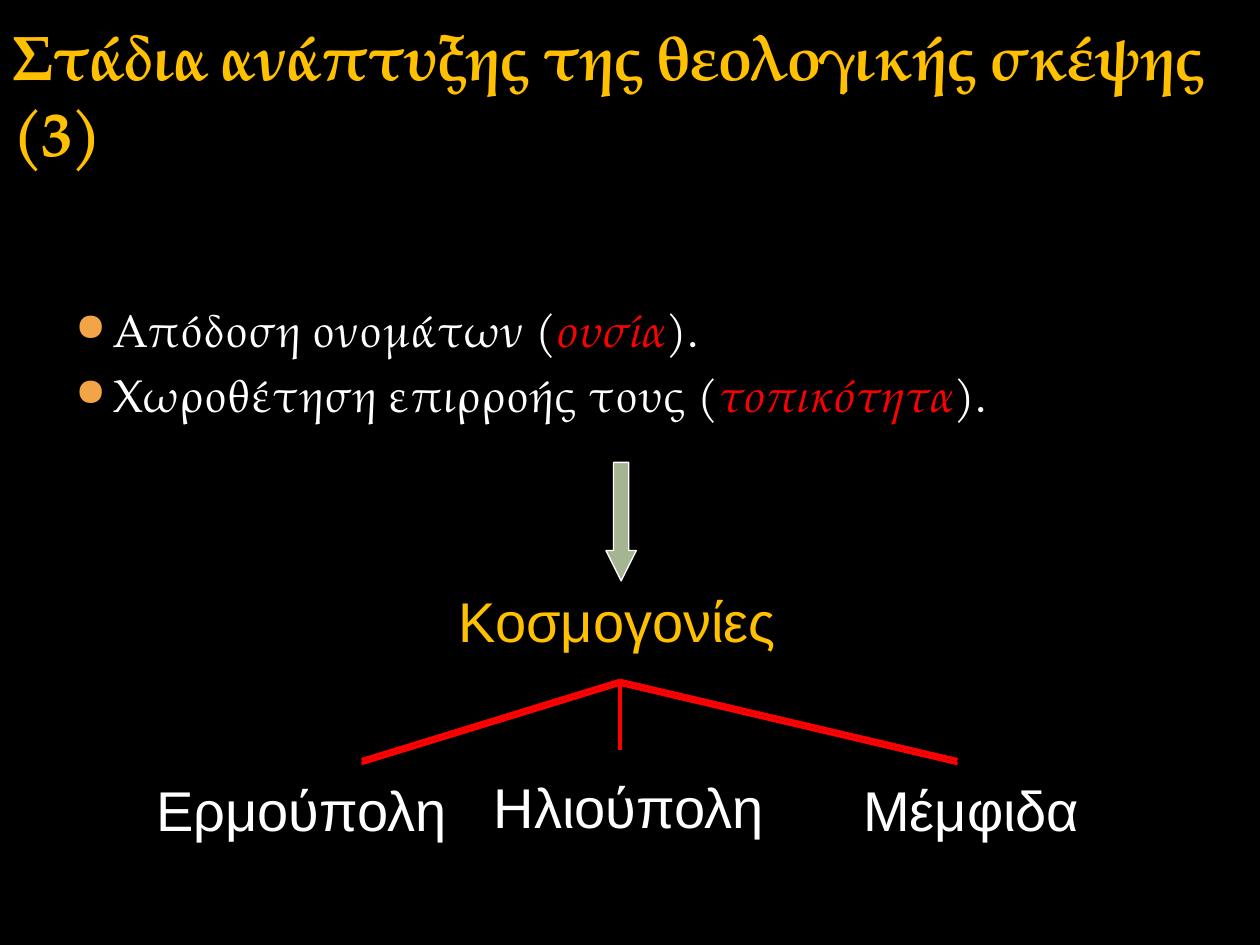
import pptx
import pptx.util
import pptx.dml.color
import pptx.enum.shapes
import pptx.enum.text
import pptx.oxml.ns
from lxml import etree
from pptx.util import Inches

COLORS = {
    "background": "000000",
    "gold": "FFC000",
    "white": "FFFFFF",
    "red": "FF0000",
    "bullet": "F3A447",
    "arrow": "A5B592",
}
SERIF = "TeX Gyre Pagella"
SANS = "Arial"
qn = pptx.oxml.ns.qn


def rgb(name):
    return pptx.dml.color.RGBColor.from_string(COLORS[name])


def add_run(p, text, *, size, font, color="white", bold=False, italic=False, spacing=0):
    r = p.add_run()
    r.text = text
    r.font.size = pptx.util.Pt(size)
    r.font.name = font
    r.font.bold = bold
    r.font.italic = italic
    r.font.color.rgb = rgb(color)
    if spacing:
        r._r.get_or_add_rPr().set("spc", str(spacing * 100))


def add_bullet(p):
    pPr = p._p.get_or_add_pPr()
    pPr.set("marL", str(Inches(0.3)))
    pPr.set("indent", str(-Inches(0.3)))
    buClr = etree.SubElement(pPr, qn("a:buClr"))
    etree.SubElement(buClr, qn("a:srgbClr"), val=COLORS["bullet"])
    etree.SubElement(pPr, qn("a:buSzPct"), val="85000")
    etree.SubElement(pPr, qn("a:buChar"), char="●")


def add_frame(s, x, y, w, h, wrap=True):
    tf = s.shapes.add_textbox(Inches(x), Inches(y), Inches(w), Inches(h)).text_frame
    tf.word_wrap = wrap
    return tf


def add_label(s, text, x, y, w, h, color="white"):
    tf = add_frame(s, x, y, w, h, wrap=False)
    p = tf.paragraphs[0]
    p.alignment = pptx.enum.text.PP_ALIGN.CENTER
    add_run(p, text, size=32, font=SANS, color=color)


def add_line(s, x1, y1, x2, y2):
    line = s.shapes.add_connector(
        pptx.enum.shapes.MSO_CONNECTOR.STRAIGHT,
        Inches(x1), Inches(y1), Inches(x2), Inches(y2))
    line.line.color.rgb = rgb("red")
    line.line.width = pptx.util.Pt(2)
    etree.SubElement(line._element.spPr, qn("a:effectLst"))


def add_title(s, x, y, w, h):
    tf = add_frame(s, x, y, w, h)
    tf.vertical_anchor = pptx.enum.text.MSO_ANCHOR.BOTTOM
    add_run(tf.paragraphs[0], "Στάδια ανάπτυξης της θεολογικής σκέψης (3)",
            size=36, font=SERIF, color="gold", bold=True, spacing=-1)


def add_body(s, x, y, w, h):
    items = [("Απόδοση ονομάτων (", "ουσία"),
             ("Χωροθέτηση επιρροής τους (", "τοπικότητα")]
    tf = add_frame(s, x, y, w, h)
    for i, (lead, term) in enumerate(items):
        p = tf.add_paragraph() if i else tf.paragraphs[0]
        add_bullet(p)
        if i:
            p.space_before = pptx.util.Pt(6)
        add_run(p, lead, size=26, font=SERIF)
        add_run(p, term, size=26, font=SERIF, color="red", italic=True)
        add_run(p, ").", size=26, font=SERIF)


def add_cosmogonies(s, x, y, w, h):
    arrow_w, arrow_h = 0.24, 0.94
    sp = s.shapes.add_shape(
        pptx.enum.shapes.MSO_SHAPE.DOWN_ARROW,
        Inches(x + 1.27), Inches(y), Inches(arrow_w), Inches(arrow_h))
    sp.adjustments[0] = 0.5
    sp.adjustments[1] = 1
    sp.shadow.inherit = False
    sp.fill.solid()
    sp.fill.fore_color.rgb = rgb("arrow")
    sp.line.color.rgb = rgb("white")
    sp.line.width = pptx.util.Pt(0.75)
    add_label(s, "Κοσμογονίες", x, y + arrow_h, w, h - arrow_h, color="gold")


def add_cities(s, x, y, w, h):
    apex = x + 3.79
    label_h = 0.64
    label_y = y + h - label_h
    for end in (x + 1.74, x + 6.47):
        for offset in (0, 0.03):
            add_line(s, apex, y + offset, end, y + 0.63 + offset)
    add_line(s, apex, y, apex, y + 0.55)
    add_label(s, "Ερμούπολη", x, label_y, 2.53, label_h)
    add_label(s, "Ηλιούπολη", x + 2.68, label_y - 0.03, 2.36, label_h)
    add_label(s, "Μέμφιδα", x + w - 1.94, label_y, 1.94, label_h)


def main():
    prs = pptx.Presentation()
    prs.slide_width = Inches(10)
    prs.slide_height = Inches(7.5)
    s = prs.slides.add_slide(prs.slide_layouts[6])
    s.background.fill.solid()
    s.background.fill.fore_color.rgb = rgb("background")
    add_title(s, 0, 0.53, 10, 0.86)
    add_body(s, 0.5, 2.35, 9, 1.96)
    add_cosmogonies(s, 3.54, 3.67, 2.72, 1.57)
    add_cities(s, 1.13, 5.4, 7.55, 1.35)
    prs.save("out.pptx")


if __name__ == "__main__":
    main()
